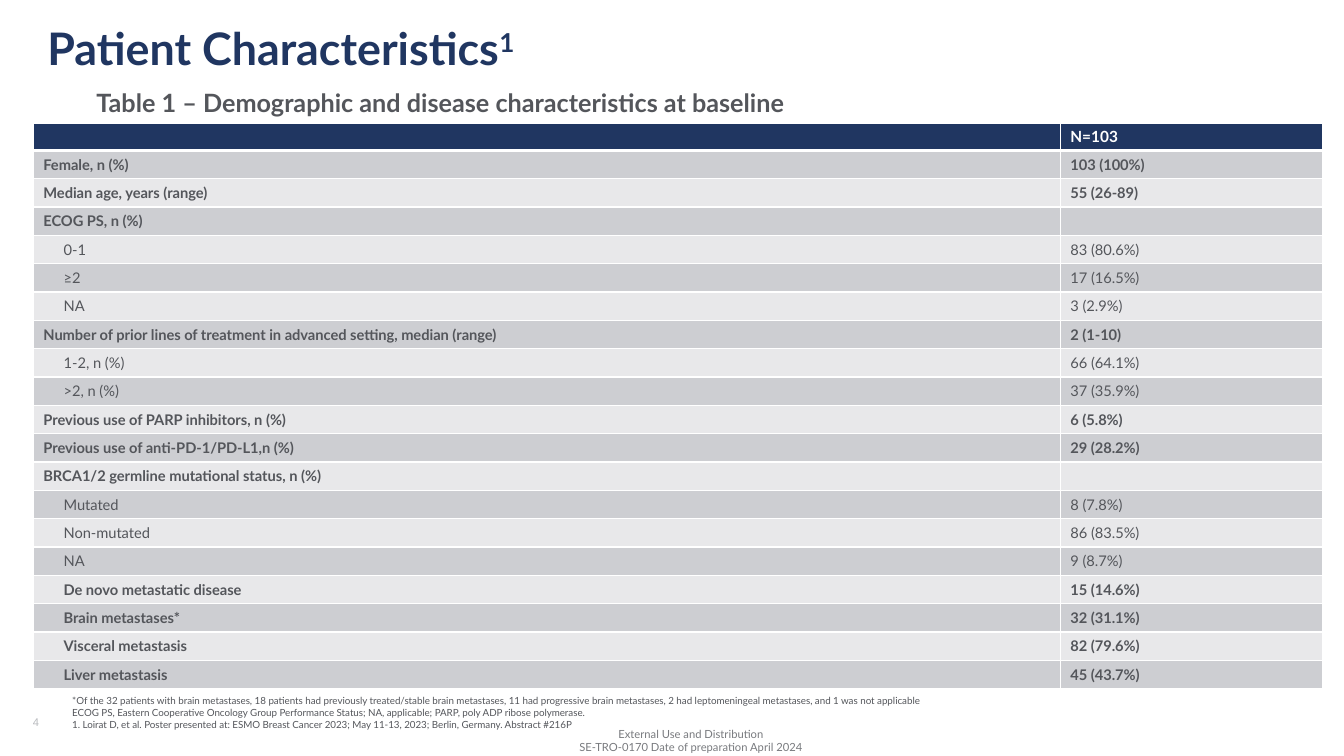
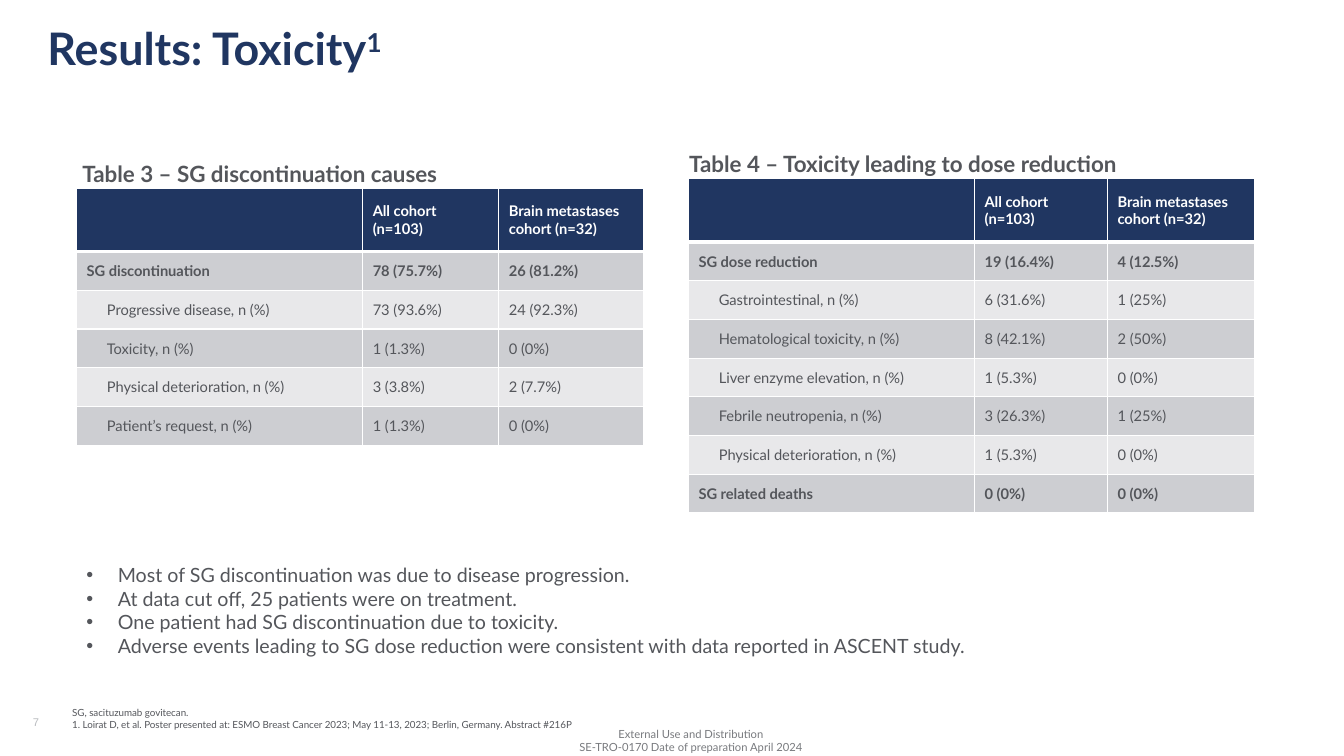
import pptx
import pptx.dml.color
import pptx.enum.text
import pptx.oxml.ns
import pptx.util
from lxml import etree

Cm = pptx.util.Cm
Pt = pptx.util.Pt
qn = pptx.oxml.ns.qn
ALIGN = pptx.enum.text.PP_ALIGN
ANCHOR = pptx.enum.text.MSO_ANCHOR

COLORS = {
    "navy": "203661",
    "text": "54565B",
    "footer": "787A7E",
    "number": "B9BBBF",
    "dark band": "CDCED2",
    "light band": "E8E8EA",
    "white": "FFFFFF",
}
ROW_STYLES = {"main": (True, 0), "sub": (False, 0.51), "site": (True, 0.51)}
REFERENCE = (
    "1. Loirat D, et al. Poster presented at: ESMO Breast Cancer 2023; "
    "May 11-13, 2023; Berlin, Germany. Abstract #216P"
)
FOOTER = ["External Use and Distribution", "SE-TRO-0170 Date of preparation April 2024"]
COHORTS = ["All cohort (n=103)", "Brain metastases cohort (n=32)"]

BASELINE_ROWS = [
    ("main", "Female, n (%)", "103 (100%)"),
    ("main", "Median age, years (range)", "55 (26-89)"),
    ("main", "ECOG PS, n (%)", ""),
    ("sub", "0-1", "83 (80.6%)"),
    ("sub", "≥2", "17 (16.5%)"),
    ("sub", "NA", "3 (2.9%)"),
    ("main", "Number of prior lines of treatment in advanced setting, median (range)", "2 (1-10)"),
    ("sub", "1-2, n (%)", "66 (64.1%)"),
    ("sub", ">2, n (%)", "37 (35.9%)"),
    ("main", "Previous use of PARP inhibitors, n (%)", "6 (5.8%)"),
    ("main", "Previous use of anti-PD-1/PD-L1,n (%)", "29 (28.2%)"),
    ("main", "BRCA1/2 germline mutational status, n (%)", ""),
    ("sub", "Mutated", "8 (7.8%)"),
    ("sub", "Non-mutated", "86 (83.5%)"),
    ("sub", "NA", "9 (8.7%)"),
    ("site", "De novo metastatic disease", "15 (14.6%)"),
    ("site", "Brain metastases*", "32 (31.1%)"),
    ("site", "Visceral metastasis", "82 (79.6%)"),
    ("site", "Liver metastasis", "45 (43.7%)"),
]
DISCONTINUATION_ROWS = [
    ("main", "SG discontinuation", "78 (75.7%)", "26 (81.2%)"),
    ("sub", "Progressive disease, n (%)", "73 (93.6%)", "24 (92.3%)"),
    ("sub", "Toxicity, n (%)", "1 (1.3%)", "0 (0%)"),
    ("sub", "Physical deterioration, n (%)", "3 (3.8%)", "2 (7.7%)"),
    ("sub", "Patient’s request, n (%)", "1 (1.3%)", "0 (0%)"),
]
DOSE_REDUCTION_ROWS = [
    ("main", "SG dose reduction", "19 (16.4%)", "4 (12.5%)"),
    ("sub", "Gastrointestinal, n (%)", "6 (31.6%)", "1 (25%)"),
    ("sub", "Hematological toxicity, n (%)", "8 (42.1%)", "2 (50%)"),
    ("sub", "Liver enzyme elevation, n (%)", "1 (5.3%)", "0 (0%)"),
    ("sub", "Febrile neutropenia, n (%)", "3 (26.3%)", "1 (25%)"),
    ("sub", "Physical deterioration, n (%)", "1 (5.3%)", "0 (0%)"),
    ("main", "SG related deaths", "0 (0%)", "0 (0%)"),
]


def rgb(name):
    return pptx.dml.color.RGBColor.from_string(COLORS[name])


class Deck:
    def __init__(self):
        self.prs = pptx.Presentation()
        self.prs.slide_width, self.prs.slide_height = Cm(33.87), Cm(19.05)
        self.slide = None

    def start(self, title, number, notes):
        self.slide = self.prs.slides.add_slide(self.prs.slide_layouts[5])
        self.title(title)
        self.text(FOOTER, (13.06, 18.26, 8.71, 0.81), 8, "footer",
                  anchor=ANCHOR.MIDDLE, align=ALIGN.CENTER)
        self.text([number], (0.58, 17.78, 7.62, 0.81), 8, "number",
                  font="Arial", anchor=ANCHOR.MIDDLE)
        self.text(notes + [REFERENCE], (1.57, 16.56, 26.34, 1.96), 7, anchor=ANCHOR.BOTTOM)

    def run(self, paragraph, text, size, color, bold=False, font="Lato"):
        run = paragraph.add_run()
        run.text = text
        run.font.size = Pt(size)
        run.font.name = font
        run.font.bold = bold
        run.font.color.rgb = rgb(color)
        return run

    def title(self, text):
        title = self.slide.shapes.title
        title.left, title.top, title.width, title.height = map(Cm, (0.94, 0.56, 31.9, 2.54))
        frame = title.text_frame
        frame.auto_size = pptx.enum.text.MSO_AUTO_SIZE.NONE
        frame.vertical_anchor = ANCHOR.TOP
        heading = frame.paragraphs[0]
        heading.alignment = ALIGN.LEFT
        heading.line_spacing = 0.9
        self.run(heading, text, 32, "navy", True)
        reference_mark = self.run(heading, "1", 32, "navy", True)
        reference_mark.font._element.set("baseline", "30000")

    def text(self, lines, box, size, color="text", bold=False, font="Lato",
             anchor=ANCHOR.TOP, align=ALIGN.LEFT, bullets=False):
        frame = self.slide.shapes.add_textbox(*map(Cm, box)).text_frame
        frame.word_wrap = True
        frame.vertical_anchor = anchor
        for index, line in enumerate(lines):
            paragraph = frame.add_paragraph() if index else frame.paragraphs[0]
            paragraph.alignment = align
            if bullets:
                self.bullet(paragraph)
            self.run(paragraph, line, size, color, bold, font)

    def bullet(self, paragraph):
        properties = paragraph._p.get_or_add_pPr()
        properties.set("marL", str(Cm(0.79)))
        properties.set("indent", str(-Cm(0.79)))
        etree.SubElement(properties, qn("a:buFont"), typeface="Arial")
        etree.SubElement(properties, qn("a:buChar"), char="•")

    def caption(self, text, box, size=16):
        self.text([text], box, size, bold=True)

    def cell(self, cell, text, fill, size, color, bold, indent=0, top=1, bottom=1):
        cell.fill.solid()
        cell.fill.fore_color.rgb = rgb(fill)
        cell.vertical_anchor = ANCHOR.MIDDLE
        cell.margin_top = cell.margin_bottom = Cm(0.08)
        paragraph = cell.text_frame.paragraphs[0]
        if text:
            paragraph._p.get_or_add_pPr().set("marL", str(Cm(indent)))
            self.run(paragraph, text, size, color, bold)
        else:
            etree.SubElement(paragraph._p, qn("a:endParaRPr"), sz=str(int(size * 100)))
        properties = cell._tc.get_or_add_tcPr()
        for index, (side, width) in enumerate(zip("LRTB", (1, 1, top, bottom))):
            line = etree.Element(qn(f"a:ln{side}"), w=str(Pt(width)))
            solid = etree.SubElement(line, qn("a:solidFill"))
            etree.SubElement(solid, qn("a:srgbClr"), val=COLORS["white"])
            properties.insert(index, line)

    def table(self, header, rows, box, widths, header_height, header_size=10.5):
        left, top, height = box
        table = self.slide.shapes.add_table(
            len(rows) + 1, len(widths), Cm(left), Cm(top), Cm(sum(widths)), Cm(height)).table
        table.horz_banding = False
        for column, width in zip(table.columns, widths):
            column.width = Cm(width)
        for row in table.rows:
            row.height = Cm((height - header_height) / len(rows))
        table.rows[0].height = Cm(header_height)
        for column, label in enumerate([""] + header):
            self.cell(table.cell(0, column), label, "navy", header_size, "white", True, bottom=3)
        for index, (style, *values) in enumerate(rows, 1):
            bold, indent = ROW_STYLES[style]
            band = "dark band" if index % 2 else "light band"
            for column, value in enumerate(values):
                self.cell(table.cell(index, column), value, band, 10.5, "text", bold,
                          0 if column else indent, top=3 if index == 1 else 1)


def main():
    deck = Deck()

    deck.start("Patient Characteristics", "4", [
        "*Of the 32 patients with brain metastases, 18 patients had previously treated/stable "
        "brain metastases, 11 had progressive brain metastases, 2 had leptomeningeal metastases, "
        "and 1 was not applicable",
        "ECOG PS, Eastern Cooperative Oncology Group Performance Status; NA, applicable; "
        "PARP, poly ADP ribose polymerase.",
    ])
    deck.caption("Table 1 – Demographic and disease characteristics at baseline",
                 (2.18, 2.08, 19.25, 1.02), 18)
    deck.table(["N=103"], BASELINE_ROWS, (0.84, 3.1, 14.27), (25.88, 6.6), 0.69, 11)

    deck.start("Results: Toxicity", "7", ["SG, sacituzumab govitecan."])
    deck.text([
        "Most of SG discontinuation was due to disease progression.",
        "At data cut off, 25 patients were on treatment.",
        "One patient had SG discontinuation due to toxicity.",
        "Adverse events leading to SG dose reduction were consistent with data reported "
        "in ASCENT study.",
    ], (1.93, 14.07, 30.4, 2.64), 14, bullets=True)
    deck.table(COHORTS, DISCONTINUATION_ROWS, (1.93, 4.74, 6.48), (7.21, 3.43, 3.66), 1.6)
    deck.table(COHORTS, DOSE_REDUCTION_ROWS, (17.35, 4.5, 8.43), (7.21, 3.35, 3.71), 1.6)
    deck.caption("Table 3 – SG discontinuation causes", (1.83, 3.91, 12.55, 0.94))
    deck.caption("Table 4 – Toxicity leading to dose reduction", (17.12, 3.66, 12.55, 0.94))

    deck.prs.save("out.pptx")


if __name__ == "__main__":
    main()
